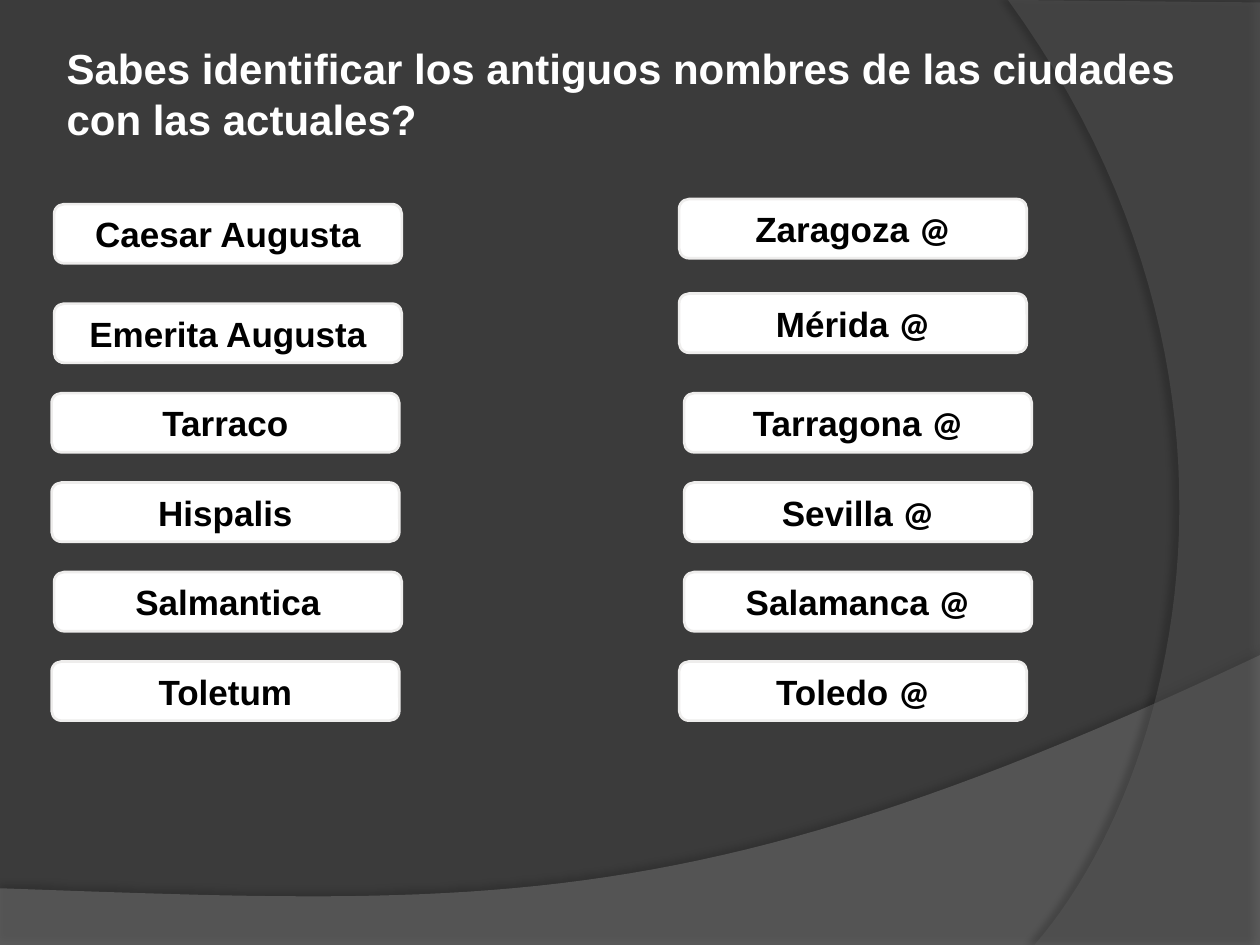
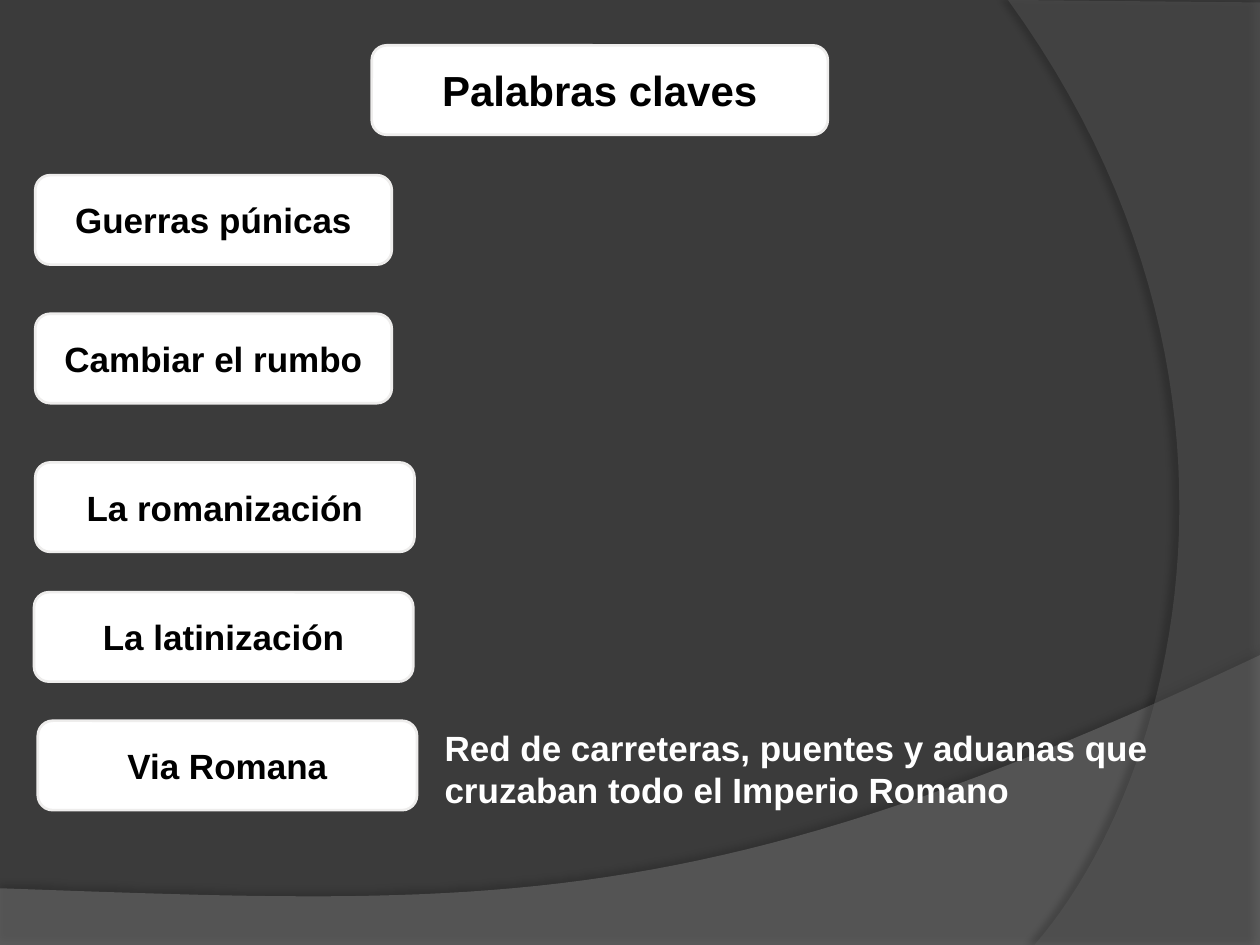
from dataclasses import dataclass

from lxml import etree
from pptx import Presentation
from pptx.dml.color import RGBColor
from pptx.enum.shapes import MSO_SHAPE
from pptx.enum.text import MSO_ANCHOR, MSO_AUTO_SIZE, PP_ALIGN
from pptx.oxml.ns import qn
from pptx.util import Inches, Pt

ROUND = MSO_SHAPE.ROUNDED_RECTANGLE
MIDDLE = MSO_ANCHOR.MIDDLE
CENTER = PP_ALIGN.CENTER
GROW = MSO_AUTO_SIZE.SHAPE_TO_FIT_TEXT

BACK, WHITE, BLACK, EDGE = "3B3B3B", "FFFFFF", "000000", "EEEDEC"
MARK = "@"
FONT = {"name": "Arial", "size": Pt(20), "bold": True}
HEAD = FONT | {"size": Pt(24)}
STEPS = 48

Point = tuple[float, float]


@dataclass
class Band:
    start: list[Point]
    curve: list[Point]
    color: str
    alpha: int
    shade: int
    dist: float
    angle: int


@dataclass
class Card:
    text: str
    left: float
    top: float
    width: float = 2.76
    height: float = 0.47


BANDS = [
    Band([(0, 7.05), (0, 7.5), (10, 7.5), (10, 5.2)],
         [(5.59, 7.29), (3.91, 7.19), (0, 7.05)],
         "7F7F7F", 45, 35, 3.5, 270),
    Band([(10, 0.02), (10, 7.5), (8.21, 7.5)],
         [(9.35, 6.19), (10.18, 3), (8, 0)],
         "5E5E5E", 40, 45, 4, 180),
]

ROW_TOP, ROW_STEP = 3.12, 0.71
LOWER = [round(ROW_TOP + ROW_STEP * row, 2) for row in range(4)]
OLD_TOPS = [1.62, 2.41, *LOWER]
NEW_TOPS = [1.58, 2.33, *LOWER]
OLD = [("Caesar Augusta", 0.43), ("Emerita Augusta", 0.43), ("Tarraco", 0.41),
       ("Hispalis", 0.41), ("Salmantica", 0.43), ("Toletum", 0.41)]
NEW = [("Zaragoza @", 5.39), ("Mérida @", 5.39), ("Tarragona @", 5.43),
       ("Sevilla @", 5.43), ("Salamanca @", 5.43), ("Toledo @", 5.39)]
TERMS = [("Guerras púnicas", 0.28, 1.39, 2.83),
         ("Cambiar el rumbo", 0.28, 2.49, 2.83),
         ("La romanización", 0.28, 3.67, 3.01),
         ("La latinización", 0.27, 4.7, 3.01),
         ("Via Romana", 0.3, 5.72, 3.01)]
TALL = 0.71


def paint(target, color: str) -> None:
    target.rgb = RGBColor.from_string(color)


def fill(target, color: str) -> None:
    target.solid()
    paint(target.fore_color, color)


def put(target, values: dict) -> None:
    for name, value in values.items():
        setattr(target, name, value)


def bend(start: Point, curve: list[Point]) -> list[Point]:
    dots = [start, *curve]
    points = []
    for step in range(1, STEPS + 1):
        t = step / STEPS
        parts = [(1 - t) ** 3, 3 * t * (1 - t) ** 2, 3 * t * t * (1 - t), t ** 3]
        points.append((sum(p * x for p, (x, _) in zip(parts, dots)),
                       sum(p * y for p, (_, y) in zip(parts, dots))))
    return points


def add_alpha(color, percent: int) -> None:
    etree.SubElement(color, qn("a:alpha"), val=str(percent * 1000))


def draw_band(slide, band: Band) -> None:
    points = band.start + bend(band.start[-1], band.curve)
    dots = [(Inches(x), Inches(y)) for x, y in points]
    pen = slide.shapes.build_freeform(*dots[0])
    pen.add_line_segments(dots[1:], close=True)
    shape = pen.convert_to_shape()
    shape.shadow.inherit = False
    fill(shape.fill, band.color)
    shape.line.fill.background()
    props = shape.element.spPr
    add_alpha(props.find(".//" + qn("a:srgbClr")), band.alpha)
    shade = etree.SubElement(
        props.find(qn("a:effectLst")), qn("a:outerShdw"),
        blurRad=str(Pt(4)), dist=str(Pt(band.dist)),
        dir=str(band.angle * 60000), algn="ctr", rotWithShape="0")
    add_alpha(etree.SubElement(shade, qn("a:srgbClr"), val=BLACK), band.shade)


def add_run(para, text: str, font: dict, color: str) -> None:
    run = para.add_run()
    run.text = text
    put(run.font, font)
    paint(run.font.color, color)


def draw_card(slide, card: Card, font: dict = FONT) -> None:
    box = [Inches(v) for v in (card.left, card.top, card.width, card.height)]
    shape = slide.shapes.add_shape(ROUND, *box)
    shape.shadow.inherit = False
    fill(shape.fill, WHITE)
    fill(shape.line.fill, EDGE)
    shape.line.width = Pt(1.5)
    put(shape.text_frame, {"vertical_anchor": MIDDLE, "word_wrap": True})
    para = shape.text_frame.paragraphs[0]
    para.alignment = CENTER
    word, mark, _ = card.text.partition(MARK)
    add_run(para, word, font, BLACK)
    if mark:
        add_run(para, mark, font | {"name": "Calibri"}, BLACK)


def draw_text(slide, card: Card, font: dict = FONT) -> None:
    box = [Inches(v) for v in (card.left, card.top, card.width, card.height)]
    frame = slide.shapes.add_textbox(*box).text_frame
    put(frame, {"word_wrap": False, "auto_size": GROW})
    for row, line in enumerate(card.text.split("\n")):
        para = frame.add_paragraph() if row else frame.paragraphs[0]
        add_run(para, line, font, WHITE)


def add_slide(deck):
    slide = deck.slides.add_slide(deck.slide_layouts[6])
    fill(slide.background.fill, BACK)
    for band in BANDS:
        draw_band(slide, band)
    return slide


def draw_towns(deck) -> None:
    slide = add_slide(deck)
    draw_text(slide, Card("Sabes identificar los antiguos nombres de las ciudades\n"
                          "con las actuales?", 0.43, 0.29, 9.08, 0.91), HEAD)
    for names, tops in ((OLD, OLD_TOPS), (NEW, NEW_TOPS)):
        for (name, left), top in zip(names, tops):
            draw_card(slide, Card(name, left, top))


def draw_terms(deck) -> None:
    slide = add_slide(deck)
    draw_card(slide, Card("Palabras claves", 2.95, 0.36, 3.62, TALL), HEAD)
    for term in TERMS:
        draw_card(slide, Card(*term, TALL))
    draw_text(slide, Card("Red de carreteras, puentes y aduanas que\n"
                          "cruzaban todo el Imperio Romano", 3.43, 5.72, 5.9, 0.77))


def main() -> None:
    deck = Presentation()
    put(deck, {"slide_width": Inches(10), "slide_height": Inches(7.5)})
    draw_towns(deck)
    draw_terms(deck)
    deck.save("out.pptx")


if __name__ == "__main__":
    main()
